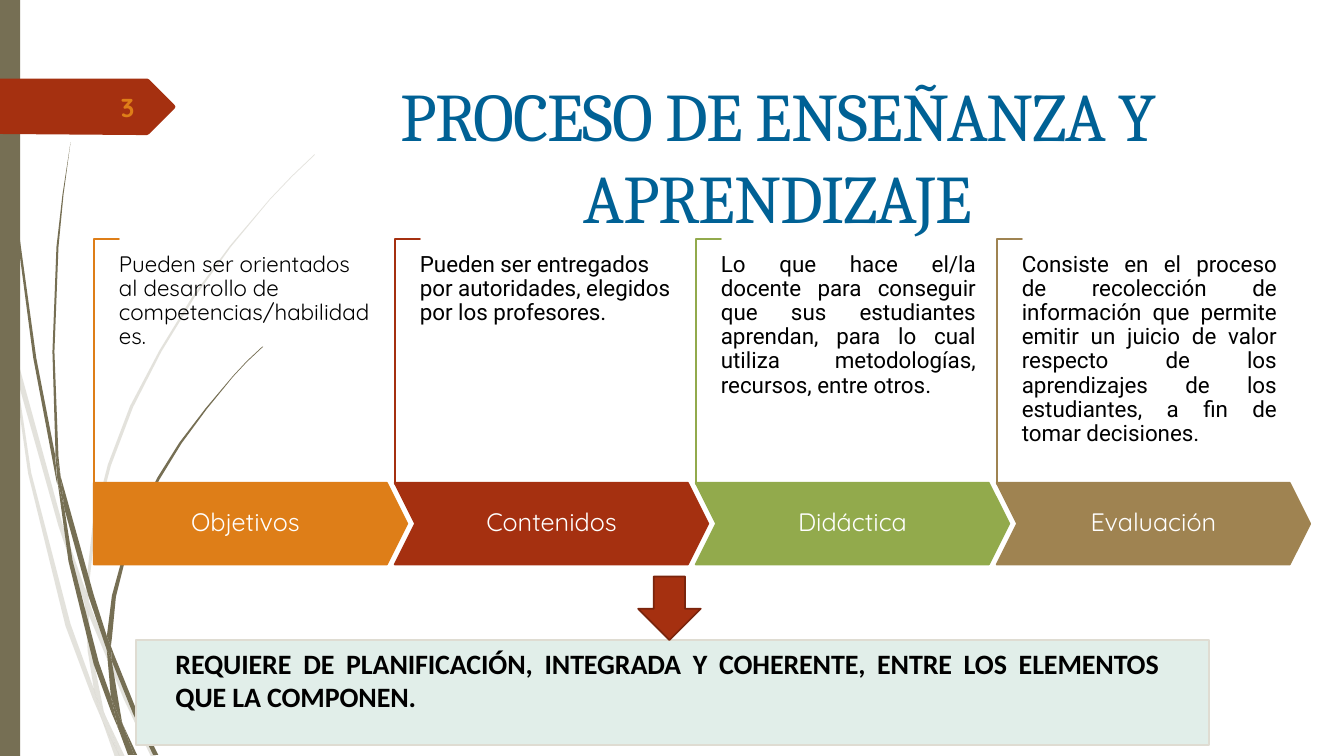
from pptx import Presentation
from pptx.dml.color import RGBColor
from pptx.enum.shapes import MSO_SHAPE
from pptx.enum.text import MSO_ANCHOR, PP_ALIGN
from pptx.oxml.ns import qn
from pptx.util import Inches, Pt
from lxml import etree

LEFT, CENTER, RIGHT, JUSTIFY = PP_ALIGN.LEFT, PP_ALIGN.CENTER, PP_ALIGN.RIGHT, PP_ALIGN.JUSTIFY
TOP, MIDDLE = MSO_ANCHOR.TOP, MSO_ANCHOR.MIDDLE
RECT, CORNER, DOWN_ARROW = MSO_SHAPE.RECTANGLE, MSO_SHAPE.CORNER, MSO_SHAPE.DOWN_ARROW
PENTAGON, CHEVRON = MSO_SHAPE.PENTAGON, MSO_SHAPE.CHEVRON


class Theme:
    olive, rust, orange, green, tan = "766F54", "A53010", "DE7E18", "92AA4C", "9F8351"
    blue, dark_rust, mint, sand = "006195", "7A240C", "E1EEE9", "DFDCD2"
    white, black = "FFFFFF", "000000"
    heading, label_font, body_font, panel_font = "Cambria", "Quicksand", "Roboto", "Calibri"
    title_size, panel_size, number_size, label_size, body_size = 48.6, 20, 18.5, 18, 16


# Outlines of the grass blades, each a list of x, y points in inches
PALE_GRASS = [
    [(.11, 3.5), (.09, 3.22), (0, 2.82), (0, 2.99), (.1, 3.44)],
    [(.58, 5.22), (.84, 5.99), (.85, 5.86), (.62, 5.2), (.14, 3.45), (.17, 3.76)],
    [(.92, 6.07), (.88, 5.96), (.88, 6.1), (1.23, 6.94), (1.5, 7.51), (1.55, 7.51), (1.27, 6.92)],
    [(1.19, 7.51), (1.24, 7.51), (1.05, 7.11)],
    [(.93, 6.83), (.7, 6.19), (.31, 4.69), (.17, 3.76), (.11, 3.5), (.28, 4.7), (.65, 6.21),
     (.92, 6.93), (1.01, 7.14), (.99, 7.07)],
    [(.84, 5.99), (.87, 6.46), (.93, 6.83), (.96, 6.92), (1.05, 7.11), (1.03, 7.06),
     (.91, 6.46), (.88, 6.1), (.88, 6.08)],
    [(.88, 5.84), (.95, 5.2), (1.1, 4.62), (1.32, 4.04), (1.6, 3.49), (1.93, 2.95), (2.29, 2.45),
     (2.68, 1.98), (2.9, 1.75), (3.12, 1.54), (3.12, 1.53), (2.89, 1.75), (2.68, 1.97),
     (2.28, 2.44), (1.91, 2.94), (1.58, 3.48), (1.29, 4.03), (1.07, 4.61), (.92, 5.2),
     (.85, 5.84), (.85, 5.86), (.88, 5.96)],
    [(1.01, 7.14), (1.14, 7.51), (1.19, 7.51)],
    [(.88, 6.08), (.88, 6.1), (.88, 5.96), (.85, 5.86), (.84, 5.99)],
    [(.96, 6.92), (.93, 6.83), (.99, 7.07), (1.01, 7.14), (1.19, 7.51), (1.05, 7.11)],
]
DARK_GRASS = [
    [(.07, 1.1), (.17, 2.33), (.33, 3.55), (.56, 4.77), (.57, 4.81), (.55, 4.57), (.55, 4.53),
     (.36, 3.55), (.19, 2.32), (.08, 1.09), (.05, .48), (.04, 0), (.03, 0), (.04, .48)],
    [(.88, 5.92), (1.06, 6.45), (1.06, 6.31), (.93, 5.9), (.6, 4.72), (.64, 5.05)],
    [(1.13, 6.49), (1.1, 6.41), (1.11, 6.56), (1.32, 7.08), (1.52, 7.49), (1.57, 7.49),
     (1.36, 7.06)],
    [(1.1, 6.91), (.98, 6.57), (.72, 5.56), (.64, 5.05), (.57, 4.77), (.68, 5.57), (.93, 6.59),
     (1.11, 7.08), (1.17, 7.22), (1.16, 7.17)],
    [(.6, 4.72), (.58, 4.53), (.54, 3.49), (.58, 2.45), (.63, 1.93), (.7, 1.41), (.62, 1.93),
     (.56, 2.45), (.52, 3.49), (.55, 4.49)],
    [(1.33, 7.49), (1.36, 7.49), (1.22, 7.19)],
    [(.57, 4.77), (.64, 5.05), (.6, 4.72), (.55, 4.49), (.55, 4.53)],
    [(1.11, 6.33), (1.15, 5.92), (1.25, 5.52), (1.4, 5.13), (1.58, 4.76), (1.8, 4.4),
     (2.05, 4.06), (2.31, 3.74), (2.45, 3.59), (2.61, 3.44), (2.6, 3.44), (2.45, 3.58),
     (2.31, 3.73), (2.04, 4.05), (1.78, 4.39), (1.56, 4.74), (1.37, 5.12), (1.22, 5.51),
     (1.11, 5.91), (1.06, 6.31), (1.1, 6.41)],
    [(1.17, 7.22), (1.27, 7.49), (1.31, 7.49)],
    [(1.06, 6.45), (1.1, 6.91), (1.16, 7.06), (1.22, 7.19), (1.21, 7.16), (1.11, 6.56),
     (1.09, 6.51)],
    [(1.06, 6.45), (1.09, 6.51), (1.11, 6.56), (1.1, 6.41), (1.06, 6.31)],
    [(1.16, 7.06), (1.1, 6.91), (1.16, 7.17), (1.17, 7.22), (1.3, 7.49), (1.33, 7.49),
     (1.22, 7.19)],
]
PAGE_TAG = [(1.73, 1.08), (1.48, 1.33), (1.46, 1.34), (1.36, 1.34), (0, 1.33), (0, .78),
            (1.46, .78), (1.48, .79), (1.73, 1.04), (1.74, 1.06)]

# Label, colour, description, its font and alignment
STEPS = [
    ("Objetivos", Theme.orange,
     "Pueden ser orientados al desarrollo de competencias/habilidades.",
     Theme.label_font, LEFT),
    ("Contenidos", Theme.rust,
     "Pueden ser entregados por autoridades, elegidos por los profesores.",
     Theme.body_font, LEFT),
    ("Didáctica", Theme.green,
     "Lo que hace el/la docente para conseguir que sus estudiantes aprendan, para lo cual "
     "utiliza metodologías, recursos, entre otros.",
     Theme.body_font, JUSTIFY),
    ("Evaluación", Theme.tan,
     "Consiste en el proceso de recolección de información que permite emitir un juicio de "
     "valor respecto de los aprendizajes de los estudiantes, a fin de tomar decisiones.",
     Theme.body_font, JUSTIFY),
]
STEP_LEFT, STEP_PITCH = 0.93, 2.985


class SlideBuilder:
    def __init__(self, slide, theme):
        self.slide, self.theme = slide, theme

    def set_text(self, sp, text, size, font, color, align=LEFT, anchor=TOP, bold=False,
                 insets=(0.1, 0.05, 0.1, 0.05), line_spacing=1.0, tracking=0):
        tf = sp.text_frame
        tf.word_wrap = True
        tf.vertical_anchor = anchor
        tf.margin_left, tf.margin_top, tf.margin_right, tf.margin_bottom = map(Inches, insets)
        p = tf.paragraphs[0]
        p.text = text
        p.alignment = align
        p.line_spacing = line_spacing
        p.font.size = Pt(size)
        p.font.name = font
        p.font.bold = bold
        p.font.color.rgb = RGBColor.from_string(color)
        if tracking:
            p._p.pPr.find(qn("a:defRPr")).set("spc", str(tracking))

    def title(self, text, box, **style):
        sp = self.slide.shapes.title
        sp.left, sp.top, sp.width, sp.height = map(Inches, box)
        self.set_text(sp, text, **style)

    def text(self, text, box, **style):
        self.set_text(self.slide.shapes.add_textbox(*map(Inches, box)), text, **style)

    def paint(self, sp, fill, line=None, width=1.25):
        sp.shadow.inherit = False
        sp.fill.solid()
        sp.fill.fore_color.rgb = RGBColor.from_string(fill)
        if line:
            sp.line.color.rgb = RGBColor.from_string(line)
            sp.line.width = Pt(width)
        else:
            sp.line.fill.background()

    def shape(self, kind, box, fill, line=None, width=1.25, adjust=()):
        sp = self.slide.shapes.add_shape(kind, *map(Inches, box))
        self.paint(sp, fill, line, width)
        for i, value in enumerate(adjust):
            sp.adjustments[i] = value
        return sp

    def outline(self, shapes, points, fill, opacity=100):
        points = [(Inches(x), Inches(y)) for x, y in points]
        builder = shapes.build_freeform(*points[0])
        builder.add_line_segments(points[1:], close=True)
        sp = builder.convert_to_shape()
        self.paint(sp, fill)
        if opacity < 100:
            color = sp._element.spPr.find(qn("a:solidFill")).find(qn("a:srgbClr"))
            etree.SubElement(color, qn("a:alpha")).set("val", str(opacity * 1000))

    def grass(self, blades, opacity=100):
        group = self.slide.shapes.add_group_shape()
        for points in blades:
            self.outline(group.shapes, points, self.theme.olive, opacity)

    def step(self, index, label, color, description, font, align):
        t = self.theme
        left = STEP_LEFT + index * STEP_PITCH
        # The bracket is laid out flat and turned a quarter
        bracket = self.shape(CORNER, (left - 1.09, 3.46, 2.43, 0.25), t.white, color,
                             adjust=(0.01, 0.01))
        bracket.rotation = 90
        arrow = self.shape(CHEVRON if index else PENTAGON, (left, 4.79, 3.11, 0.81),
                           color, color, adjust=(0.25,))
        self.set_text(arrow, label, t.label_size, t.label_font, t.white, CENTER, MIDDLE,
                      insets=(0.12, 0.25, 0.12, 0.25), line_spacing=0.9)
        self.text(description, (left + 0.25, 2.51, 2.53, 1.7), size=t.body_size, font=font,
                  color=t.black, align=align, insets=(0, 0, 0, 0), line_spacing=0.9)


def main():
    prs = Presentation()
    prs.slide_width, prs.slide_height = Inches(13.33), Inches(7.5)
    t = Theme
    s = SlideBuilder(prs.slides.add_slide(prs.slide_layouts[5]), t)

    # Side decoration
    s.grass(PALE_GRASS, opacity=20)
    s.grass(DARK_GRASS)
    s.shape(RECT, (0, 0, 0.2, 7.5), t.olive)
    s.outline(s.slide.shapes, PAGE_TAG, t.rust)

    # Title
    s.title("PROCESO DE ENSEÑANZA Y APRENDIZAJE", (2.84, 0.68, 9.75, 1.4), size=t.title_size,
            font=t.heading, color=t.blue, align=CENTER, tracking=-90)

    # Process steps
    for i, step in enumerate(STEPS):
        s.step(i, *step)

    # Slide number
    s.text("3", (0.58, 0.86, 0.85, 0.4), size=t.number_size, font=t.label_font,
           color=t.orange, align=RIGHT, anchor=MIDDLE, bold=True)

    # Conclusion
    panel = s.shape(RECT, (1.35, 6.35, 10.64, 1.04), t.mint, t.sand, 1)
    s.set_text(panel, "REQUIERE DE PLANIFICACIÓN, INTEGRADA Y COHERENTE, ENTRE LOS ELEMENTOS "
               "QUE LA COMPONEN.", t.panel_size, t.panel_font, t.black, JUSTIFY, bold=True,
               insets=(0.39, 0.06, 0.5, 0), tracking=-10)
    s.shape(DOWN_ARROW, (6.33, 5.72, 0.62, 0.63), t.rust, t.dark_rust)

    prs.save("out.pptx")


if __name__ == "__main__":
    main()
